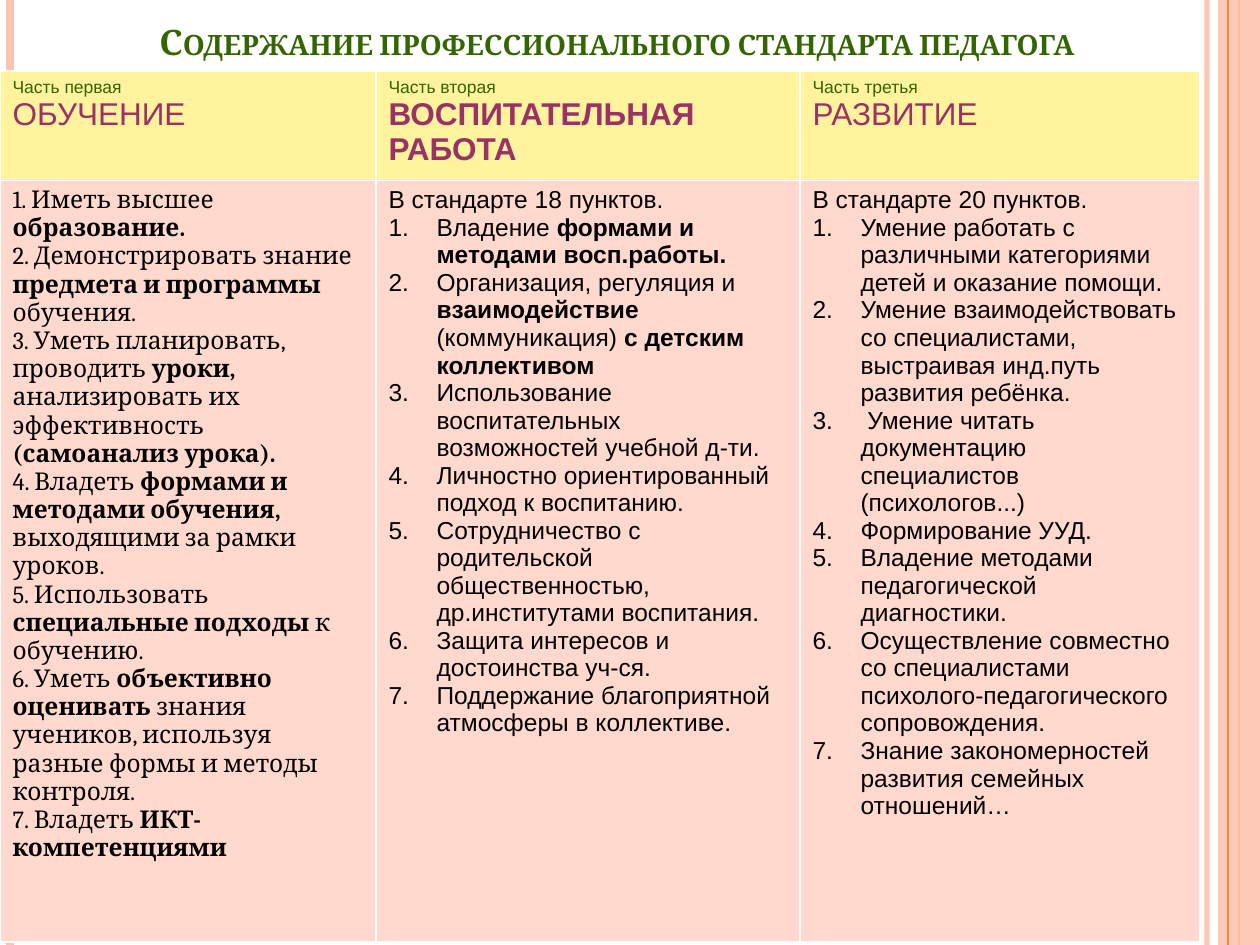
from lxml import etree
from pptx import Presentation
from pptx import util as u
from pptx.dml.color import RGBColor
from pptx.enum import shapes, text
from pptx.oxml.ns import qn

PX_PER_INCH = 126
W, H = 1260, 945

WHITE = RGBColor(0xFF, 0xFF, 0xFF)
BLACK = RGBColor(0, 0, 0)
GREEN = RGBColor(0x33, 0x66, 0x00)
PLUM = RGBColor(0x99, 0x33, 0x66)
YELLOW = RGBColor(0xFF, 0xF3, 0x9D)
PEACH = RGBColor(0xFF, 0xD9, 0xCE)
PINK = RGBColor(0xFE, 0xC3, 0xAE)
ORANGE = RGBColor(0xFE, 0x86, 0x37)

TITLE = "Содержание профессионального стандарта педагога"

# Text between ** marks is bold.
PARTS = [
    {
        "width": 376, "part": "Часть первая", "name": "ОБУЧЕНИЕ",
        "lines": [
            "1. Иметь высшее **образование. **",
            "2. Демонстрировать знание **предмета и программы **обучения.",
            "3. Уметь планировать, проводить **уроки, **анализировать их "
            "эффективность **(самоанализ урока).**",
            "4. Владеть **формами и методами обучения, **выходящими за рамки уроков.",
            "5. Использовать **специальные подходы **к обучению.",
            "6. Уметь **объективно оценивать** знания учеников, используя "
            "разные формы и методы контроля.",
            "7. Владеть **ИКТ-компетенциями**",
        ],
    },
    {
        "width": 424, "part": "Часть вторая", "name": "**ВОСПИТАТЕЛЬНАЯ РАБОТА**",
        "intro": "В стандарте 18 пунктов.",
        "items": [
            "Владение **формами и методами восп.работы.**",
            "Организация, регуляция и **взаимодействие **(коммуникация) "
            "**с детским коллективом**",
            "Использование воспитательных возможностей учебной д-ти.",
            "Личностно ориентированный подход к воспитанию.",
            "Сотрудничество с родительской общественностью, "
            "др.институтами воспитания.",
            "Защита интересов и достоинства уч-ся.",
            "Поддержание благоприятной атмосферы в коллективе.",
        ],
    },
    {
        "width": 400, "part": "Часть третья", "name": "РАЗВИТИЕ",
        "intro": "В стандарте 20 пунктов.",
        "items": [
            "Умение работать с различными категориями детей и оказание помощи.",
            "Умение взаимодействовать со специалистами, выстраивая инд.путь "
            "развития ребёнка.",
            " Умение читать документацию специалистов (психологов...)",
            "Формирование УУД.",
            "Владение методами педагогической диагностики.",
            "Осуществление совместно со специалистами "
            "психолого-педагогического сопровождения.",
            "Знание закономерностей развития семейных отношений…",
        ],
    },
]
TABLE_TOP = 71
ROW_HEIGHTS = [103, 762]
INDENT = 48


def px(n):
    return u.Inches(n / PX_PER_INCH)


def set_alpha(fill_owner, percent):
    color = fill_owner.find(".//" + qn("a:srgbClr"))
    etree.SubElement(color, qn("a:alpha"), val=str(percent * 1000))


def add_stripe(s, x, width, color, alpha=100):
    line = s.shapes.add_connector(shapes.MSO_CONNECTOR.STRAIGHT, px(x), 0, px(x), px(H))
    line.line.color.rgb = color
    line.line.width = u.Pt(width)
    sp_pr = line._element.spPr
    if alpha < 100:
        set_alpha(sp_pr, alpha)
    etree.SubElement(sp_pr, qn("a:effectLst"))


def add_band(s, x, width, color, alpha):
    sp = s.shapes.add_shape(shapes.MSO_SHAPE.RECTANGLE, px(x), 0, px(width), px(H))
    sp.shadow.inherit = False
    sp.fill.solid()
    sp.fill.fore_color.rgb = color
    set_alpha(sp._element.spPr, alpha)
    sp.line.fill.background()


def add_runs(p, marked, size, color, font="Arial"):
    """Add runs to p, switching bold at each ** mark."""
    for i, part in enumerate(marked.split("**")):
        if part:
            r = p.add_run()
            r.text = part
            r.font.size = u.Pt(size)
            r.font.name = font
            r.font.bold = i % 2 == 1
            r.font.color.rgb = color


def number(p):
    p_pr = p._p.get_or_add_pPr()
    p_pr.set("marL", str(px(INDENT)))
    p_pr.set("indent", str(-px(INDENT)))
    etree.SubElement(p_pr, qn("a:buFont"), typeface="Arial")
    etree.SubElement(p_pr, qn("a:buAutoNum"), type="arabicPeriod")


def style_cell(cell, color):
    cell.fill.solid()
    cell.fill.fore_color.rgb = color
    tc_pr = cell._tc.get_or_add_tcPr()
    for i, side in enumerate("LRTB"):
        ln = etree.Element(qn("a:ln" + side), w=str(u.Pt(1)))
        fill = etree.SubElement(ln, qn("a:solidFill"))
        etree.SubElement(fill, qn("a:srgbClr"), val=str(WHITE))
        tc_pr.insert(i, ln)


def fill_header(cell, part):
    style_cell(cell, YELLOW)
    tf = cell.text_frame
    add_runs(tf.paragraphs[0], part["part"], 10, GREEN)
    add_runs(tf.add_paragraph(), part["name"], 18, PLUM)


def fill_body(cell, part):
    style_cell(cell, PEACH)
    tf = cell.text_frame
    p = tf.paragraphs[0]
    for i, line in enumerate(part.get("lines", [])):
        if i:
            p.add_line_break()
        add_runs(p, line, 14, BLACK, "Cambria")
    if "items" in part:
        add_runs(p, part["intro"], 14, BLACK)
        for item in part["items"]:
            p = tf.add_paragraph()
            number(p)
            add_runs(p, item, 14, BLACK)


def add_title(s):
    tf = s.shapes.add_textbox(px(147), 0, px(W - 147), px(69)).text_frame
    tf.word_wrap = True
    tf.vertical_anchor = text.MSO_ANCHOR.BOTTOM
    p = tf.paragraphs[0]
    add_runs(p, f"**{TITLE}**", 20, GREEN, "Cambria")
    p.runs[0].font._element.set("cap", "small")


def add_parts_table(s):
    width = sum(part["width"] for part in PARTS)
    table = s.shapes.add_table(len(ROW_HEIGHTS), len(PARTS), 0, px(TABLE_TOP),
                               px(width), px(sum(ROW_HEIGHTS))).table
    table.first_row = table.horz_banding = False
    for row, height in zip(table.rows, ROW_HEIGHTS):
        row.height = px(height)
    for c, part in enumerate(PARTS):
        table.columns[c].width = px(part["width"])
        fill_header(table.cell(0, c), part)
        fill_body(table.cell(1, c), part)


def main():
    prs = Presentation()
    prs.slide_width, prs.slide_height = px(W), px(H)
    s = prs.slides.add_slide(prs.slide_layouts[6])
    add_stripe(s, 1207, 3, PINK, 93)
    add_stripe(s, 10, 4.5, PINK)
    add_stripe(s, 1239, 1.5, ORANGE)
    add_band(s, 1218, 42, PINK, 87)
    add_stripe(s, 1228, 0.75, ORANGE)
    add_title(s)
    add_parts_table(s)
    prs.save("out.pptx")


if __name__ == "__main__":
    main()
